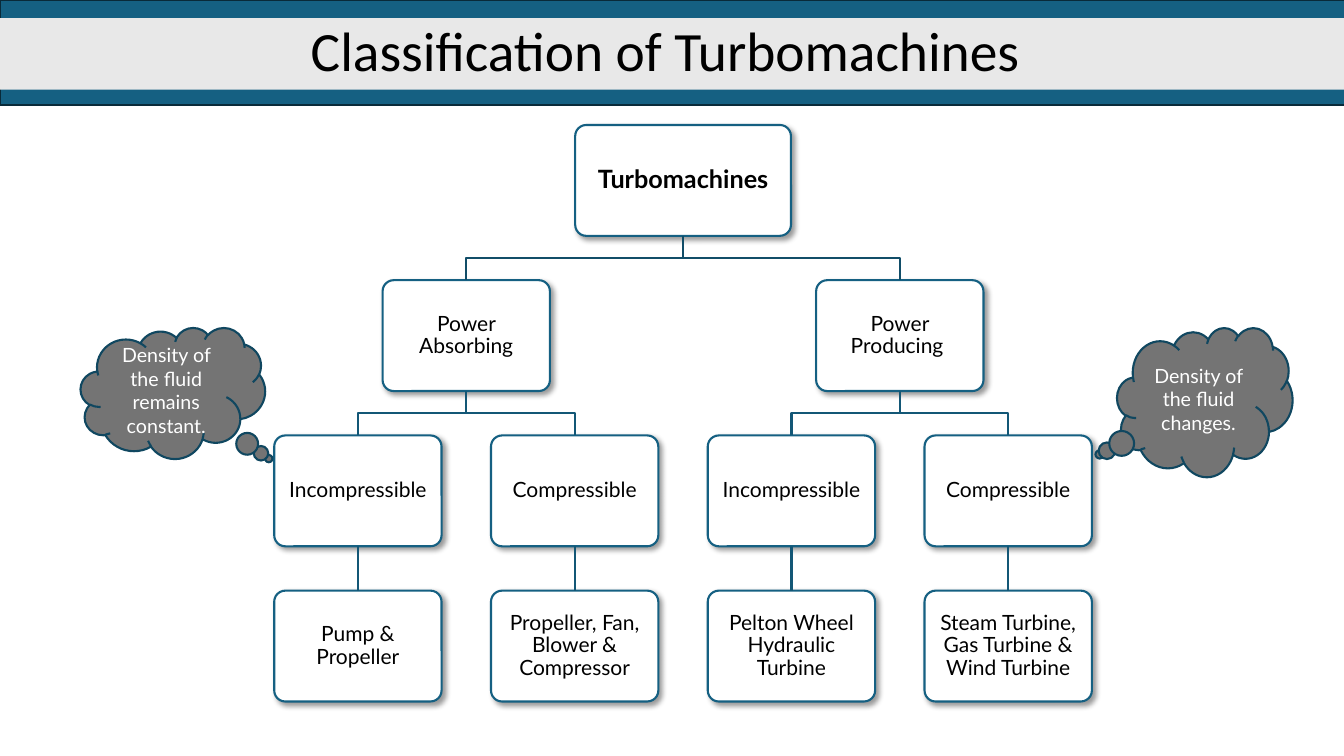
from lxml import etree
from pptx import Presentation
from pptx.dml.color import RGBColor
from pptx.enum.shapes import MSO_CONNECTOR as LINK, MSO_SHAPE as SHAPE
from pptx.enum.text import MSO_ANCHOR as ANCHOR, PP_ALIGN as ALIGN
from pptx.oxml import parse_xml
from pptx.oxml.ns import nsdecls, qn
from pptx.util import Inches, Pt

COLORS = {
    "banner": "156082", "banner_edge": "092A39", "title_band": "E8E8E8",
    "box": "FFFFFF", "box_edge": "156082",
    "upper_link": "114D68", "lower_link": "135776",
    "cloud": "747474", "cloud_edge": "104760",
    "dark": "000000", "light": "FFFFFF",
}

# Tree grid, in inches
FIRST_CENTER, COLUMN_STEP = 3.55, 2.15
FIRST_TOP, LEVEL_STEP = 1.24, 1.54
BOX_WIDTH, ROOT_WIDTH, BOX_HEIGHT = 1.66, 2.14, 1.1

BRANCHES = [
    ("Power Absorbing", [
        ("Incompressible", "Pump & Propeller"),
        ("Compressible", "Propeller, Fan, Blower & Compressor"),
    ]),
    ("Power Producing ", [
        ("Incompressible", "Pelton Wheel Hydraulic Turbine"),
        ("Compressible", "Steam Turbine, Gas Turbine & Wind Turbine"),
    ]),
]


def color(name):
    return RGBColor.from_string(COLORS[name])


def set_line(shape, name):
    shape.line.color.rgb = color(name)
    shape.line.width = Pt(1.5)


def add_panel(page, kind, left, top, width, height, fill, edge=None):
    panel = page.shapes.add_shape(
        kind, Inches(left), Inches(top), Inches(width), Inches(height))
    panel.shadow.inherit = False
    panel.fill.solid()
    panel.fill.fore_color.rgb = color(fill)
    if edge:
        set_line(panel, edge)
    else:
        panel.line.fill.background()
    return panel


def write(shape, text, size, font, ink, bold=False, spacing=None, inset=None):
    frame = shape.text_frame
    frame.word_wrap = True
    frame.vertical_anchor = ANCHOR.MIDDLE
    if inset is not None:
        frame.margin_left = frame.margin_right = Inches(inset)
        frame.margin_top = frame.margin_bottom = Inches(inset)
    para = frame.paragraphs[0]
    para.alignment = ALIGN.CENTER
    if spacing:
        para.line_spacing = spacing
    span = para.add_run()
    span.text = text
    span.font.size = Pt(size)
    span.font.name = font
    span.font.bold = bold
    span.font.color.rgb = color(ink)


def add_soft_shadow(shape):
    effects = shape._element.spPr.find(qn("a:effectLst"))
    effects.append(parse_xml(
        f'<a:outerShdw {nsdecls("a")} blurRad="{Pt(4)}" dist="{Pt(3)}" '
        'dir="2700000" algn="tl" rotWithShape="0">'
        '<a:srgbClr val="000000"><a:alpha val="40000"/></a:srgbClr>'
        '</a:outerShdw>'))


def add_node(page, text, center, level, width=BOX_WIDTH, size=15, bold=False):
    box = add_panel(page, SHAPE.ROUNDED_RECTANGLE, center - width / 2,
                    FIRST_TOP + level * LEVEL_STEP, width, BOX_HEIGHT,
                    "box", "box_edge")
    box.adjustments[0] = 0.1
    add_soft_shadow(box)
    write(box, text, size, "Lato", "dark", bold, spacing=0.9, inset=0.09)
    return box


def add_elbow(page, parent, child, ink):
    start_x = parent.left + parent.width // 2
    start_y = parent.top + parent.height
    end_x = child.left + child.width // 2
    middle_y = (start_y + child.top) // 2
    builder = page.shapes.build_freeform(start_x, start_y)
    builder.add_line_segments(
        [(start_x, middle_y), (end_x, middle_y), (end_x, child.top)],
        close=False)
    elbow = builder.convert_to_shape()
    elbow.shadow.inherit = False
    elbow.fill.background()
    set_line(elbow, ink)


def add_straight(page, parent, child, ink):
    link = page.shapes.add_connector(LINK.STRAIGHT, 0, 0, 0, 0)
    link.begin_connect(parent, 2)
    link.end_connect(child, 0)
    set_line(link, ink)
    etree.SubElement(link._element.spPr, qn("a:effectLst"))


def add_cloud(page, text, left, top, width, height, tail):
    cloud = add_panel(page, SHAPE.CLOUD_CALLOUT, left, top, width, height,
                      "cloud", "cloud_edge")
    cloud.adjustments[0], cloud.adjustments[1] = tail
    write(cloud, text, 14, "Lato", "light")


def add_tree(page):
    root_center = FIRST_CENTER + 1.5 * COLUMN_STEP
    root = add_node(page, "Turbomachines", root_center, 0, ROOT_WIDTH, 18, True)
    for branch, (power, kinds) in enumerate(BRANCHES):
        center = FIRST_CENTER + (2 * branch + 0.5) * COLUMN_STEP
        power_box = add_node(page, power, center, 1)
        add_elbow(page, root, power_box, "upper_link")
        for side, (flow, machines) in enumerate(kinds):
            center = FIRST_CENTER + (2 * branch + side) * COLUMN_STEP
            flow_box = add_node(page, flow, center, 2)
            machine_box = add_node(page, machines, center, 3)
            add_elbow(page, power_box, flow_box, "lower_link")
            add_straight(page, flow_box, machine_box, "lower_link")


def main():
    deck = Presentation()
    deck.slide_width, deck.slide_height = Inches(13.33), Inches(7.5)
    page = deck.slides.add_slide(deck.slide_layouts[6])

    # Title banner
    add_panel(page, SHAPE.RECTANGLE, 0, 0, 13.41, 1.04, "banner", "banner_edge")
    title = add_panel(page, SHAPE.RECTANGLE, -0.09, 0.18, 13.5, 0.71, "title_band")
    write(title, "Classification of Turbomachines ", 39.6, "Calibri", "dark",
          spacing=0.9)

    # Classification tree
    add_tree(page)

    # Density remarks
    add_cloud(page, "Density of the fluid changes.",
              11.08, 3.25, 1.74, 1.48, (-0.6, 0.35))
    add_cloud(page, "Density of the fluid remains constant.",
              0.8, 3.25, 1.83, 1.3, (0.52, 0.5))

    deck.save("out.pptx")


if __name__ == "__main__":
    main()
